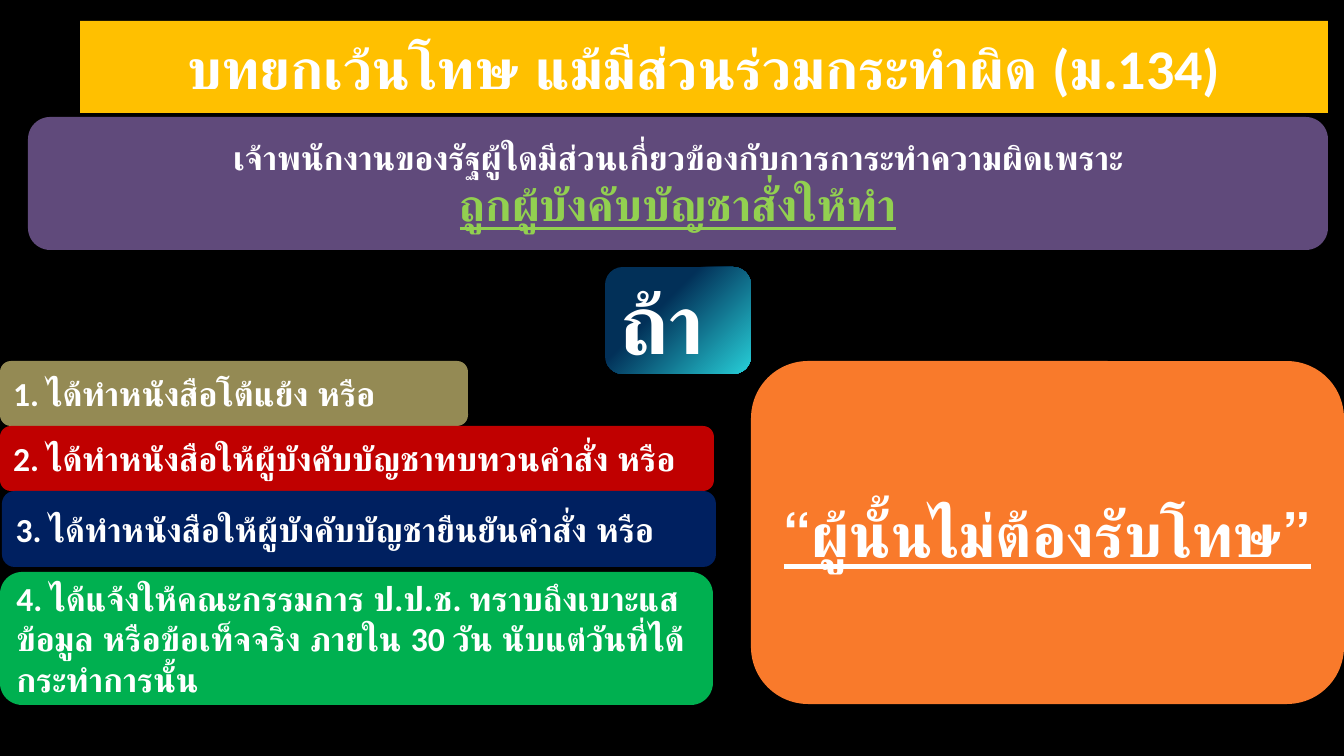
"""Build the slide on the exemption from penalty under section 134."""
import lxml.etree
import pptx
import pptx.dml.color
import pptx.enum.shapes
import pptx.enum.text
import pptx.oxml.ns
import pptx.util

RGB = pptx.dml.color.RGBColor
ALIGN = pptx.enum.text.PP_ALIGN
PX = 914400 / 100.8
WIDE, HIGH = 1344, 756
FONT = "Calibri"

BLACK = RGB(0x00, 0x00, 0x00)
WHITE = RGB(0xFF, 0xFF, 0xFF)
GOLD = RGB(0xFF, 0xC0, 0x00)
PLUM = RGB(0x60, 0x4A, 0x7B)
LIME = RGB(0x92, 0xD0, 0x50)
OLIVE = RGB(0x94, 0x8A, 0x54)
RED = RGB(0xC0, 0x00, 0x00)
NAVY = RGB(0x00, 0x20, 0x60)
GREEN = RGB(0x00, 0xB0, 0x50)
ORANGE = RGB(0xF9, 0x7A, 0x2B)
DEEP = RGB(0x02, 0x30, 0x58)
AQUA = RGB(0x26, 0xCB, 0xD5)

STEPS = [
    (0, 0, 468, 65, OLIVE, "1. ได้ทำหนังสือโต้แย้ง หรือ"),
    (0, 65, 714, 65, RED, "2. ได้ทำหนังสือให้ผู้บังคับบัญชาทบทวนคำสั่ง หรือ"),
    (2, 130, 714, 76, NAVY, "3. ได้ทำหนังสือให้ผู้บังคับบัญชายืนยันคำสั่ง หรือ"),
    (0, 211, 713, 133, GREEN,
     "4. ได้แจ้งให้คณะกรรมการ ป.ป.ช. ทราบถึงเบาะแส ข้อมูล หรือข้อเท็จจริง "
     "ภายใน 30 วัน นับแต่วันที่ได้กระทำการนั้น"),
]


def emu(box):
    """Turn px lengths into EMU."""
    return [pptx.util.Emu(round(n * PX)) for n in box]


def write(shape, text, size, align):
    """Set bold white text, centred in height."""
    frame = shape.text_frame
    frame.text = text
    frame.word_wrap = True
    frame.auto_size = pptx.enum.text.MSO_AUTO_SIZE.NONE
    frame.vertical_anchor = pptx.enum.text.MSO_ANCHOR.MIDDLE
    for line in frame.paragraphs:
        line.alignment = align
        font = line.runs[0].font
        font.name, font.size, font.bold = FONT, pptx.util.Pt(size), True
        font.color.rgb = WHITE


def paint(shape, color):
    """Give a shape a plain fill and no line."""
    shape.fill.solid()
    shape.fill.fore_color.rgb = color
    shape.line.fill.background()


def panel(slide, box, color, text, size, align=ALIGN.CENTER):
    """Add a rounded panel with text and return it."""
    kind = pptx.enum.shapes.MSO_SHAPE.ROUNDED_RECTANGLE
    shape = slide.shapes.add_shape(kind, *emu(box))
    shape.shadow.inherit = False
    paint(shape, color)
    write(shape, text, size, align)
    return shape


def head(slide, box):
    """Turn the title placeholder into a rounded banner."""
    title = slide.shapes.title
    title.left, title.top, title.width, title.height = emu(box)
    form = lxml.etree.SubElement(
        title.element.spPr, pptx.oxml.ns.qn("a:prstGeom"), prst="roundRect")
    lxml.etree.SubElement(form, pptx.oxml.ns.qn("a:avLst"))
    paint(title, GOLD)
    write(title, "บทยกเว้นโทษ แม้มีส่วนร่วมกระทำผิด (ม.134)", 40, ALIGN.CENTER)


def rule(slide, box):
    """Add the rule, with its ground set off in green."""
    text = ("เจ้าพนักงานของรัฐผู้ใดมีส่วนเกี่ยวข้องกับการการะทำความผิดเพราะ\n"
            "ถูกผู้บังคับบัญชาสั่งให้ทำ")
    shape = panel(slide, box, PLUM, text, 24)
    font = shape.text_frame.paragraphs[1].runs[0].font
    font.size, font.underline = pptx.util.Pt(32), True
    font.color.rgb = LIME


def steps(slide, box):
    """Add the four conditions from the corner of the box."""
    left, top = box[:2]
    for x, y, wide, high, color, text in STEPS:
        panel(slide, (left + x, top + y, wide, high), color, text, 24, ALIGN.LEFT)


def result(slide, box):
    """Add the outcome panel."""
    shape = panel(slide, box, ORANGE, "“ผู้นั้นไม่ต้องรับโทษ”", 44)
    shape.text_frame.paragraphs[0].runs[0].font.underline = True


def when(slide, box):
    """Add the 'if' tile with its slanted gradient."""
    fill = panel(slide, box, DEEP, "ถ้า", 60, ALIGN.LEFT).fill
    fill.gradient()
    fill.gradient_angle = 315
    for stop, place, color in zip(fill.gradient_stops, (0.37, 0.98), (DEEP, AQUA)):
        stop.position = place
        stop.color.rgb = color


def main():
    """Build and save the slide."""
    deck = pptx.Presentation()
    deck.slide_width, deck.slide_height = emu((WIDE, HIGH))
    slide = deck.slides.add_slide(deck.slide_layouts[5])
    back = slide.background.fill
    back.solid()
    back.fore_color.rgb = BLACK
    head(slide, (80, 21, 1248, 92))
    rule(slide, (28, 117, 1300, 133))
    steps(slide, (0, 361, 716, 344))
    result(slide, (751, 361, 593, 343))
    when(slide, (605, 267, 146, 107))
    deck.save("out.pptx")


if __name__ == "__main__":
    main()
